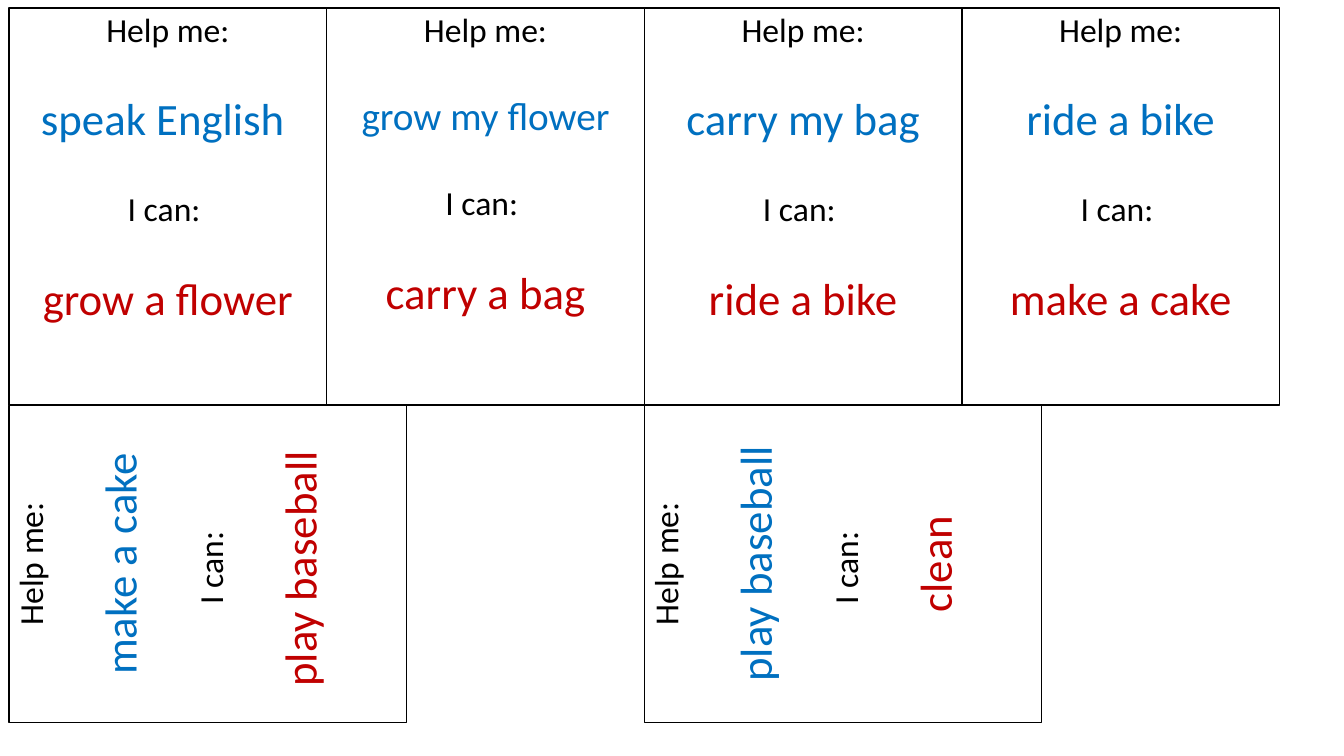
"""Build a slide of six "Help me / I can" speaking cards."""
from dataclasses import dataclass

from pptx import Presentation
from pptx.dml.color import RGBColor
from pptx.enum.shapes import MSO_SHAPE
from pptx.enum.text import MSO_ANCHOR, MSO_AUTO_SIZE, PP_ALIGN
from pptx.util import Inches, Pt


@dataclass(frozen=True)
class Theme:
    """Colours, font and type sizes of the cards."""
    font: str = "Calibri"
    black: str = "000000"
    white: str = "FFFFFF"
    blue: str = "0070C0"
    red: str = "C00000"
    label_size: int = 24
    phrase_size: int = 32
    long_phrase_size: int = 28
    gap: int = 34
    line_spacing: float = 0.9


THEME = Theme()
LEFT, TOP = 0.09, 0.08
CARD_WIDTH, CARD_HEIGHT = 3.15, 3.94

UPRIGHT_CARDS = [
    ("speak English ", "grow a flower", THEME.phrase_size),
    ("grow my flower", "carry a bag", THEME.long_phrase_size),
    ("carry my bag", "ride a bike", THEME.phrase_size),
    ("ride a bike", "make a cake", THEME.phrase_size),
]
TURNED_CARDS = [
    ("make a cake", "play baseball "),
    ("play baseball", "clean"),
]


def write_text(para, text, *, size, color, space_before=0):
    """Write one centred, formatted line into a paragraph."""
    para.alignment = PP_ALIGN.CENTER
    para.line_spacing = THEME.line_spacing
    para.space_before = Pt(space_before)
    para.space_after = Pt(0)
    span = para.add_run()
    span.text = text
    span.font.name = THEME.font
    span.font.size = Pt(size)
    span.font.color.rgb = RGBColor.from_string(color)


def place_card(box, left, top, rotation=0):
    """Position a card and give it a white fill and thin black outline."""
    box.left, box.top = Inches(left), Inches(top)
    box.width, box.height = Inches(CARD_WIDTH), Inches(CARD_HEIGHT)
    box.rotation = rotation
    box.fill.solid()
    box.fill.fore_color.rgb = RGBColor.from_string(THEME.white)
    box.line.color.rgb = RGBColor.from_string(THEME.black)
    box.line.width = Pt(1)


def fill_card(box, request, skill, request_size=THEME.phrase_size):
    """Write the request and the skill under their labels."""
    frame = box.text_frame
    frame.word_wrap = True
    frame.auto_size = MSO_AUTO_SIZE.NONE
    frame.vertical_anchor = MSO_ANCHOR.TOP
    lines = [
        ("Help me:", THEME.label_size, THEME.black),
        (request, request_size, THEME.blue),
        ("I can: ", THEME.label_size, THEME.black),
        (skill, THEME.phrase_size, THEME.red),
    ]
    for index, (text, size, color) in enumerate(lines):
        para = frame.add_paragraph() if index else frame.paragraphs[0]
        write_text(para, text, size=size, color=color,
                   space_before=THEME.gap if index else 0)


def add_card(page):
    """Add a plain rectangle for a card."""
    box = page.shapes.add_shape(MSO_SHAPE.RECTANGLE, 0, 0, 0, 0)
    box.shadow.inherit = False
    return box


def main():
    """Lay out the cards and save the deck."""
    deck = Presentation()
    deck.slide_width, deck.slide_height = Inches(13.33), Inches(7.5)
    page = deck.slides.add_slide(deck.slide_layouts[5])

    for column, (request, skill, size) in enumerate(UPRIGHT_CARDS):
        box = add_card(page) if column else page.shapes.title
        place_card(box, LEFT + column * CARD_WIDTH, TOP)
        fill_card(box, request, skill, size)

    turn_shift = (CARD_HEIGHT - CARD_WIDTH) / 2
    for index, (request, skill) in enumerate(TURNED_CARDS):
        box = add_card(page)
        left = LEFT + 2 * index * CARD_WIDTH + turn_shift
        place_card(box, left, TOP + CARD_HEIGHT - turn_shift, rotation=270)
        fill_card(box, request, skill)

    deck.save("out.pptx")


if __name__ == "__main__":
    main()
